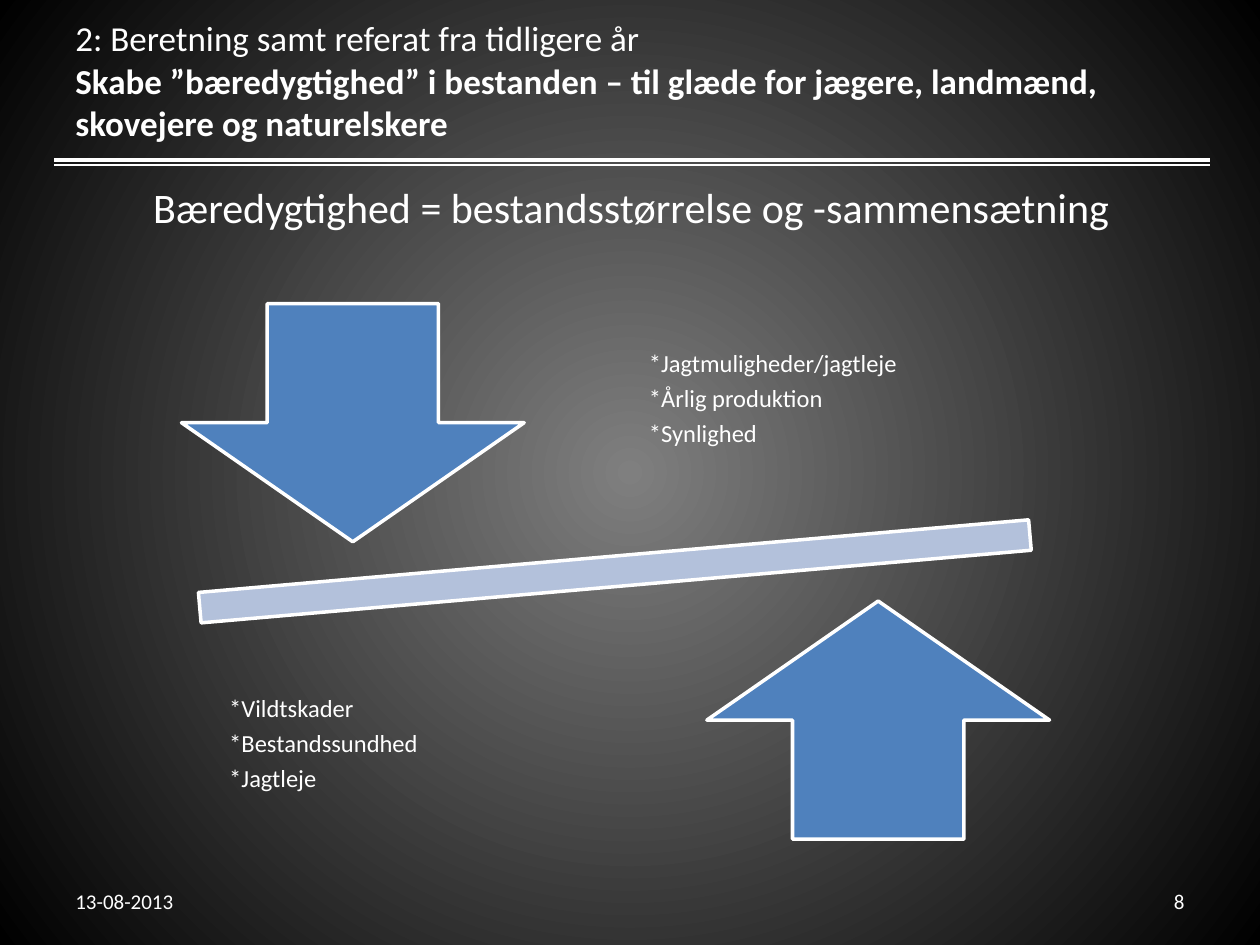
from lxml.etree import SubElement
from pptx import Presentation
from pptx.dml.color import RGBColor
from pptx.enum.shapes import MSO_CONNECTOR, MSO_SHAPE
from pptx.enum.text import MSO_ANCHOR, PP_ALIGN
from pptx.oxml import parse_xml
from pptx.oxml.ns import nsdecls, qn
from pptx.util import Inches, Pt

# Content
TITLE = "2: Beretning samt referat fra tidligere år"
SUBTITLE = ("Skabe ”bæredygtighed” i bestanden – til glæde for jægere, "
            "landmænd, skovejere og naturelskere")
HEADLINE = "Bæredygtighed = bestandsstørrelse og -sammensætning"
DATE, PAGE = "13-08-2013", "8"
FACTORS = [
    ((5.04, 2.18, 3.12, 1.98),
     ["*Jagtmuligheder/jagtleje", "*Årlig produktion", "*Synlighed"]),
    ((1.71, 4.92, 2.9, 1.98),
     ["*Vildtskader", "*Bestandssundhed", "*Jagtleje"]),
]
RULES = [(1.31, 1), (1.27, 2)]
SEESAW = [
    (MSO_SHAPE.MATH_MINUS, (0.38, 4.02, 9, 1.03), 355, "B3C1DB"),
    (MSO_SHAPE.DOWN_ARROW, (1.44, 2.41, 2.72, 1.89), 0, "4F81BD"),
    (MSO_SHAPE.UP_ARROW, (5.61, 4.77, 2.72, 1.89), 0, "4F81BD"),
]
WHITE = "FFFFFF"
GRADIENT = f"""<a:gradFill {nsdecls('a')} rotWithShape="1"><a:gsLst>
<a:gs pos="0"><a:srgbClr val="7F7F7F"/></a:gs>
<a:gs pos="100000"><a:srgbClr val="000000"/></a:gs></a:gsLst>
<a:path path="circle"><a:fillToRect l="50000" t="50000" r="50000" b="50000"/></a:path>
</a:gradFill>"""


def color(value):
    return RGBColor.from_string(value)


def add_run(paragraph, text, size, bold=False):
    run = paragraph.add_run()
    run.text = text
    run.font.name = "Calibri"
    run.font.size = Pt(size)
    run.font.bold = bold
    run.font.color.rgb = color(WHITE)


def add_text(slide, place, lines, size, align=PP_ALIGN.LEFT,
             anchor=MSO_ANCHOR.MIDDLE, inset=None, line_spacing=None, after=0):
    frame = slide.shapes.add_textbox(*map(Inches, place)).text_frame
    frame.word_wrap = True
    frame.vertical_anchor = anchor
    if inset is not None:
        frame.margin_left = frame.margin_right = Inches(inset)
        frame.margin_top = frame.margin_bottom = Inches(inset)
    for i, line in enumerate(lines):
        paragraph = frame.add_paragraph() if i else frame.paragraphs[0]
        paragraph.alignment = align
        paragraph.line_spacing = line_spacing
        paragraph.space_after = Pt(after)
        add_run(paragraph, line, size)
    return frame


prs = Presentation()
prs.slide_width, prs.slide_height = Inches(10), Inches(7.5)
slide = prs.slides.add_slide(prs.slide_layouts[6])

# Radial background
slide.background.fill.gradient()
linear = next(slide.element.iter(qn("a:gradFill")))
linear.getparent().replace(linear, parse_xml(GRADIENT))

# Double rule under the title
for y, width in RULES:
    rule = slide.shapes.add_connector(
        MSO_CONNECTOR.STRAIGHT, Inches(0.43), Inches(y), Inches(9.6), Inches(y))
    rule.line.color.rgb = color(WHITE)
    rule.line.width = Pt(width)
    SubElement(rule.element.spPr, qn("a:effectLst"))

# Title, headline and footer
title = add_text(slide, (0.5, 0.05, 9, 1.17), [TITLE], 20).paragraphs[0]
title.add_line_break()
add_run(title, SUBTITLE, 20, bold=True)
add_text(slide, (0.51, 1.39, 9, 0.58), [HEADLINE], 24,
         PP_ALIGN.CENTER, MSO_ANCHOR.TOP)
add_text(slide, (0.5, 6.95, 2.33, 0.4), [DATE], 12)
add_text(slide, (7.17, 6.95, 2.33, 0.4), [PAGE], 12, PP_ALIGN.RIGHT)

# Seesaw with its two arrows
for kind, place, rotation, fill in SEESAW:
    part = slide.shapes.add_shape(kind, *map(Inches, place))
    part.rotation = rotation
    part.shadow.inherit = False
    part.fill.solid()
    part.fill.fore_color.rgb = color(fill)
    part.line.color.rgb = color(WHITE)
    part.line.width = Pt(2)

# Factors beside each arrow
for place, factors in FACTORS:
    add_text(slide, place, factors, 14, inset=0.11, line_spacing=0.9, after=4.9)

prs.save("out.pptx")
